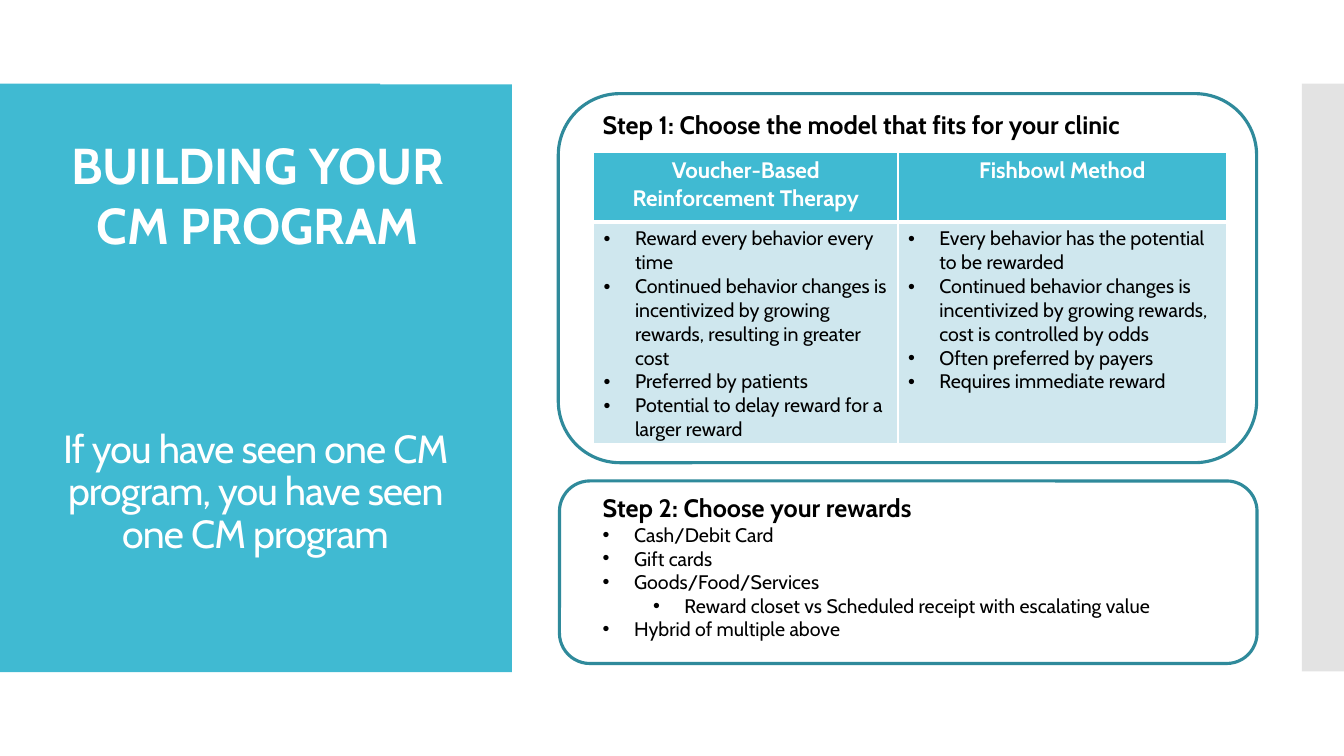
"""Builds the slide on choosing a model and rewards for a CM program."""
from lxml.etree import SubElement
from pptx import Presentation
from pptx.dml.color import RGBColor
from pptx.enum.shapes import MSO_SHAPE as Preset
from pptx.enum.text import MSO_ANCHOR as Anchor, PP_ALIGN as Align
from pptx.oxml import parse_xml
from pptx.oxml.ns import nsdecls, qn
from pptx.util import Cm, Pt

HEADING = "BUILDING YOUR CM PROGRAM"
TAGLINE = "If you have seen one CM program, you have seen one CM program"
STEP_ONE = "Step 1: Choose the model that fits for your clinic"
STEP_TWO = "Step 2: Choose your rewards"
MODELS = {
    "Voucher-Based Reinforcement Therapy": [
        "Reward every behavior every time",
        "Continued behavior changes is incentivized by growing rewards, resulting in greater cost",
        "Preferred by patients",
        "Potential to delay reward for a larger reward",
    ],
    "Fishbowl Method": [
        "Every behavior has the potential to be rewarded",
        "Continued behavior changes is incentivized by growing rewards, cost is controlled by odds",
        "Often preferred by payers",
        "Requires immediate reward",
    ],
}
REWARDS = [
    ("Cash/Debit Card", 0),
    ("Gift cards", 0),
    ("Goods/Food/Services", 0),
    ("Reward closet vs Scheduled receipt with escalating value", 1),
    ("Hybrid of multiple above", 0),
]


class Theme:
    """Colours, font and type styles of the slide."""

    font = "Cabin"
    teal, outline, pale, grey = "40BAD2", "2F8A9B", "CFE7EE", "C8C8C8"
    white, black = "FFFFFF", "000000"
    heading = {"size": Pt(36), "bold": True, "color": white}
    tagline = {"size": Pt(28), "bold": False, "color": white}
    step = {"size": Pt(18), "bold": True, "color": black}
    column = {"size": Pt(16), "bold": True, "color": white}
    body = {"size": Pt(14), "bold": False, "color": black}


PANELS = [
    ((0, 2.11, 9.58, 14.81), Theme.teal, None),
    ((32.81, 2.11, 1.06, 14.81), Theme.grey, 50),
    ((0, 2.13, 12.9, 14.81), Theme.teal, None),
]
FRAMES = [(14.07, 2.36, 17.6, 9.3), (14.1, 12.12, 17.58, 4.6)]
TABLE_LEFT, TABLE_TOP = 14.96, 3.84
COLUMN_WIDTHS, ROW_HEIGHTS = [7.67, 8.28], [1.75, 5.56]
BULLET_INDENT, LEVEL_INDENT = 0.79, 1.27


def rgb(color):
    return RGBColor.from_string(color)


def place(box):
    return [Cm(value) for value in box]


def add_box(slide, preset, box):
    shape = slide.shapes.add_shape(preset, *place(box))
    shape.shadow.inherit = False
    return shape


def add_panel(slide, box, color, opacity):
    panel = add_box(slide, Preset.RECTANGLE, box)
    panel.fill.solid()
    panel.fill.fore_color.rgb = rgb(color)
    panel.line.fill.background()
    if opacity:
        color_node = next(panel.element.spPr.iter(qn("a:srgbClr")))
        SubElement(color_node, qn("a:alpha"), val=str(opacity * 1000))


def add_frame(slide, box):
    frame = add_box(slide, Preset.ROUNDED_RECTANGLE, box)
    frame.fill.background()
    frame.line.color.rgb = rgb(Theme.outline)
    frame.line.width = Pt(2.25)


def write(paragraph, text, style, align=Align.LEFT):
    paragraph.alignment = align
    run = paragraph.add_run()
    run.text = text
    for name, value in {"name": Theme.font, **style}.items():
        if name == "color":
            run.font.color.rgb = rgb(value)
        else:
            setattr(run.font, name, value)
    return run


def write_bullet(paragraph, text, level=0):
    write(paragraph, text, Theme.body)
    paragraph.level = level
    properties = paragraph._p.get_or_add_pPr()
    properties.set("marL", str(Cm(BULLET_INDENT + level * LEVEL_INDENT)))
    properties.set("indent", str(-Cm(BULLET_INDENT)))
    SubElement(properties, qn("a:buFont"), typeface="Arial")
    SubElement(properties, qn("a:buChar"), char="•")


def add_text(slide, box, anchor=Anchor.TOP):
    frame = slide.shapes.add_textbox(*place(box)).text_frame
    frame.word_wrap = True
    frame.vertical_anchor = anchor
    return frame


def style_cell(cell, color, widths):
    cell.fill.solid()
    cell.fill.fore_color.rgb = rgb(color)
    properties = cell._tc.get_or_add_tcPr()
    for index, (side, width) in enumerate(zip("LRTB", widths)):
        properties.insert(index, parse_xml(
            f'<a:ln{side} {nsdecls("a")} w="{Pt(width)}"><a:solidFill>'
            f'<a:srgbClr val="{Theme.white}"/></a:solidFill></a:ln{side}>'))


def add_models(slide):
    box = (TABLE_LEFT, TABLE_TOP, sum(COLUMN_WIDTHS), sum(ROW_HEIGHTS))
    table = slide.shapes.add_table(2, len(MODELS), *place(box)).table
    for row, height in zip(table.rows, ROW_HEIGHTS):
        row.height = Cm(height)
    for index, (model, traits) in enumerate(MODELS.items()):
        table.columns[index].width = Cm(COLUMN_WIDTHS[index])
        header, body = table.cell(0, index), table.cell(1, index)
        style_cell(header, Theme.teal, (1, 1, 1, 3))
        style_cell(body, Theme.pale, (1, 1, 3, 1))
        write(header.text_frame.paragraphs[0], model, Theme.column, Align.CENTER)
        for number, trait in enumerate(traits):
            frame = body.text_frame
            write_bullet(frame.add_paragraph() if number else frame.paragraphs[0], trait)


def main():
    presentation = Presentation()
    presentation.slide_width, presentation.slide_height = Cm(33.87), Cm(19.05)
    slide = presentation.slides.add_slide(presentation.slide_layouts[6])
    for panel in PANELS:
        add_panel(slide, *panel)

    tagline = add_text(slide, (0.86, 10.69, 11.15, 3.48), Anchor.MIDDLE).paragraphs[0]
    tagline.line_spacing = 0.9
    run = write(tagline, TAGLINE, Theme.tagline, Align.CENTER)
    run.font._element.set("spc", "-60")
    heading = add_text(slide, (1.02, 3.25, 10.95, 3.33))
    write(heading.paragraphs[0], HEADING, Theme.heading, Align.CENTER)

    for frame in FRAMES:
        add_frame(slide, frame)
    step_one = add_text(slide, (14.94, 2.64, 16.1, 1.02))
    write(step_one.paragraphs[0], STEP_ONE, Theme.step)
    add_models(slide)
    step_two = add_text(slide, (14.94, 12.29, 16.1, 4.62))
    write(step_two.paragraphs[0], STEP_TWO, Theme.step)
    for reward, level in REWARDS:
        write_bullet(step_two.add_paragraph(), reward, level)
    presentation.save("out.pptx")


if __name__ == "__main__":
    main()
